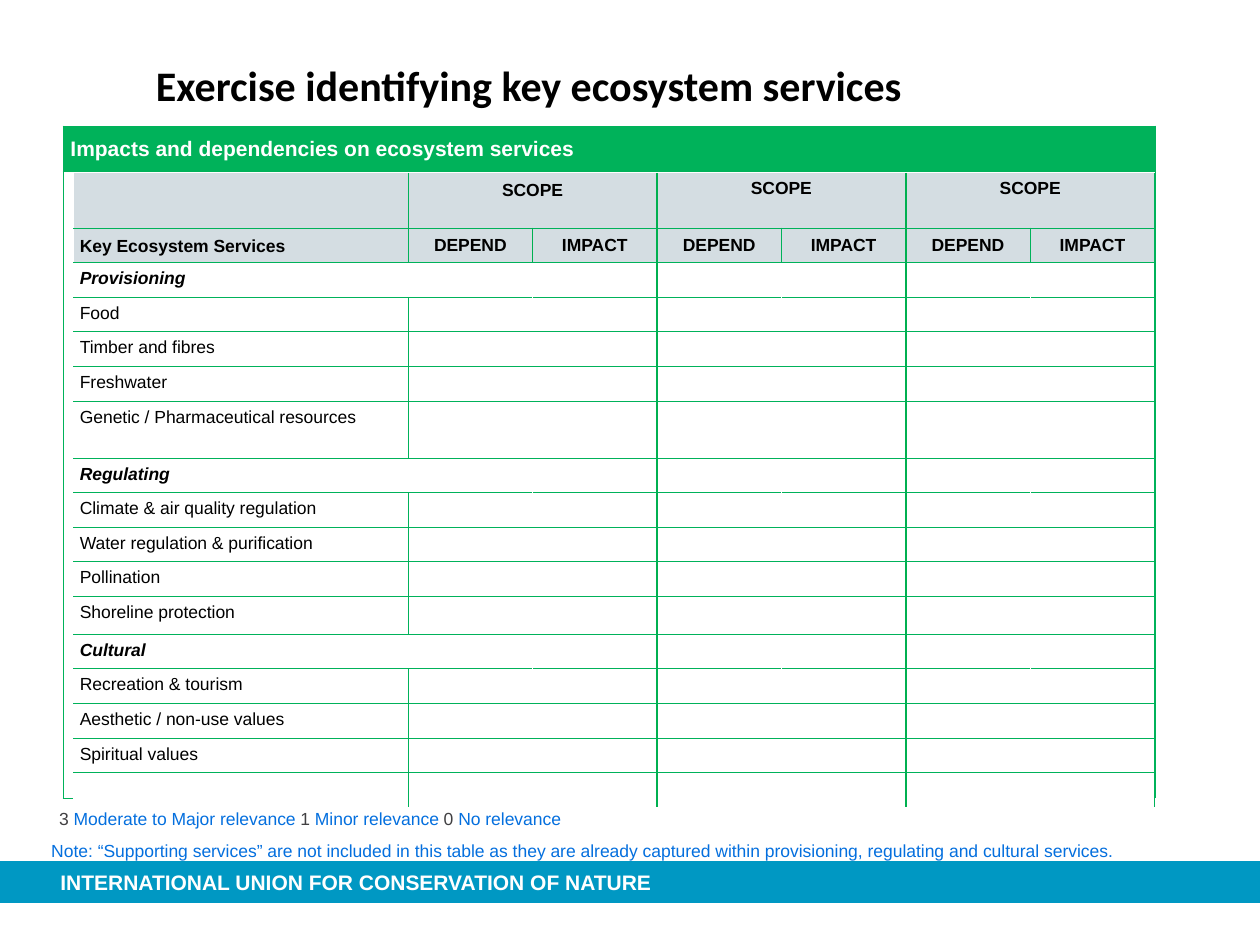
from pptx import Presentation
from pptx.dml.color import RGBColor
from pptx.enum.shapes import MSO_SHAPE
from pptx.enum.text import MSO_ANCHOR as ANCHOR, PP_ALIGN as ALIGN
from pptx.oxml import parse_xml
from pptx.oxml.ns import nsdecls
from pptx.util import Pt

WHITE = RGBColor(0xFF, 0xFF, 0xFF)
BLACK = RGBColor(0, 0, 0)
GREEN = RGBColor(0x00, 0xB2, 0x5A)
DIVIDER_GREEN = RGBColor(0x00, 0xB0, 0x50)
HEAD_GREY = RGBColor(0xD4, 0xDD, 0xE2)
FOOTER_BLUE = RGBColor(0x00, 0x98, 0xC3)
NOTE_BLUE = RGBColor(0x04, 0x6F, 0xDE)
DARK = RGBColor(0x41, 0x40, 0x42)

THIN = (GREEN, 0.5)
DIVIDER = (DIVIDER_GREEN, 1)
PALE = (WHITE, 0.5)


def write(paragraph, text, size, color, font="Arial", bold=False, italic=False):
    run = paragraph.add_run()
    run.text = text
    run.font.color.rgb = color
    look = {"size": Pt(size), "name": font, "bold": bold, "italic": italic}
    for name, value in look.items():
        setattr(run.font, name, value)


def style_cell(cell, fill, borders, margin, anchor=ANCHOR.TOP):
    """Fill, margins and the left, right, top and bottom borders of a cell."""
    if fill is None:
        cell.fill.background()
    else:
        cell.fill.solid()
        cell.fill.fore_color.rgb = fill
    cell.vertical_anchor = anchor
    for side in ("left", "right", "top", "bottom"):
        setattr(cell, f"margin_{side}", Pt(margin))
    properties = cell._tc.get_or_add_tcPr()
    for index, (side, border) in enumerate(zip("LRTB", borders)):
        if border:
            color, width = border
            paint = f'<a:solidFill><a:srgbClr val="{color}"/></a:solidFill>'
        else:
            paint, width = "<a:noFill/>", 0
        properties.insert(index, parse_xml(
            f'<a:ln{side} {nsdecls("a")} w="{Pt(width)}">{paint}</a:ln{side}>'))
    # Empty cells need a small size, or they stretch their row
    if not cell.text_frame.text:
        cell.text_frame.paragraphs[0]._p.append(
            parse_xml(f'<a:endParaRPr {nsdecls("a")} sz="800"/>'))


deck = Presentation()
deck.slide_width, deck.slide_height = Pt(720), Pt(540)
slide = deck.slides.add_slide(deck.slide_layouts[6])
shapes = slide.shapes

# Footer band
band = shapes.add_shape(MSO_SHAPE.RECTANGLE, Pt(0), Pt(492), Pt(720), Pt(24))
band.shadow.inherit = False
band.fill.solid()
band.fill.fore_color.rgb = FOOTER_BLUE
band.line.fill.background()

# Outer frame with the green heading
frame = shapes.add_table(2, 1, Pt(36), Pt(72), Pt(624), Pt(384)).table
frame.rows[0].height, frame.rows[1].height = Pt(26), Pt(358)
heading, body = frame.cell(0, 0), frame.cell(1, 0)
write(heading.text_frame.paragraphs[0],
      "Impacts and dependencies on ecosystem services", 12, WHITE, bold=True)
style_cell(heading, GREEN, [THIN] * 4, 4.3, ANCHOR.MIDDLE)
style_cell(body, None, [THIN] * 4, 4.3)

# Services grid: each group name is followed by its services
groups = {
    "Provisioning": ["Food", "Timber and fibres", "Freshwater",
                     "Genetic / Pharmaceutical resources"],
    "Regulating": ["Climate & air quality regulation", "Water regulation & purification",
                   "Pollination", "Shoreline protection"],
    "Cultural": ["Recreation & tourism", "Aesthetic / non-use values", "Spiritual values"],
}
labels = ["", "Key Ecosystem Services"]
for group, services in groups.items():
    labels += [group, *services]
labels.append("")
last = len(labels) - 1

ROW_HEIGHT = 19.8
special_heights = {0: 31.5, labels.index("Genetic / Pharmaceutical resources"): 32.5,
                   labels.index("Shoreline protection"): 21.5}
heights = [special_heights.get(row, ROW_HEIGHT) for row in range(len(labels))]
widths = [191.2] + [71.1] * 6

grid = shapes.add_table(len(labels), len(widths), Pt(42), Pt(98.8),
                        Pt(sum(widths)), Pt(sum(heights))).table
for row, height in zip(grid.rows, heights):
    row.height = Pt(height)
for column, width in zip(grid.columns, widths):
    column.width = Pt(width)

for row, label in enumerate(labels):
    is_head, is_group = row < 2, label in groups
    # Vertical lines from the left edge to the right edge
    inner = [THIN if is_head else None if is_group else PALE] * 3
    if row == 1:
        inner[0] = DIVIDER
    lines = [PALE, None if is_group else THIN, inner[0], DIVIDER,
             inner[1], DIVIDER, inner[2], THIN]
    if row == 0:
        for column in (1, 3, 5):
            grid.cell(0, column).merge(grid.cell(0, column + 1))
    elif is_group:
        grid.cell(row, 0).merge(grid.cell(row, 2))
    for column in range(len(widths)):
        cell = grid.cell(row, column)
        paragraph = cell.text_frame.paragraphs[0]
        text, anchor = "", ANCHOR.TOP
        if column == 0:
            text = label
            anchor = ANCHOR.BOTTOM if row == 1 else ANCHOR.TOP
        elif is_head:
            paragraph.alignment = ALIGN.CENTER
            if row == 1:
                text, anchor = ("IMPACT", "DEPEND")[column % 2], ANCHOR.MIDDLE
            elif column % 2:
                text = "SCOPE"
        if text:
            write(paragraph, text, 10, BLACK, bold=is_head or is_group, italic=is_group)
        right = lines[column + 1]
        if cell.is_merge_origin:
            right = lines[column + cell.span_width]
        borders = [lines[column], right,
                   THIN if row > 0 else None, THIN if row < last else None]
        style_cell(cell, HEAD_GREY if is_head else WHITE, borders, 3.6, anchor)
grid.cell(0, 1).margin_top = Pt(4.6)

# Title, legend, note and footer text: box, margins, anchor, then runs
texts = [
    ((82, 26, 527, 40), (7.2, 3.6), ANCHOR.TOP, 24, "Calibri", True,
     [("Exercise identifying key ecosystem services", BLACK)]),
    ((33.8, 461.8, 306, 12), (0, 0), ANCHOR.TOP, 10, "Arial", False,
     [("3 ", DARK), ("Moderate to Major relevance ", NOTE_BLUE),
      ("1 ", DARK), ("Minor relevance ", NOTE_BLUE),
      ("0 ", DARK), ("No relevance", NOTE_BLUE)]),
    ((29.3, 479.8, 640, 12), (0, 0), ANCHOR.TOP, 10, "Arial", False,
     [("Note: “Supporting services” are not included in this table as they are already "
       "captured within provisioning, regulating and cultural services.", NOTE_BLUE)]),
    ((34.5, 497, 403, 14), (0, 0), ANCHOR.MIDDLE, 12, "Arial", True,
     [("INTERNATIONAL UNION FOR CONSERVATION OF NATURE", WHITE)]),
]
for box, (side, edge), anchor, size, font, bold, runs in texts:
    text_frame = shapes.add_textbox(*map(Pt, box)).text_frame
    layout = {"word_wrap": True, "vertical_anchor": anchor,
              "margin_left": Pt(side), "margin_right": Pt(side),
              "margin_top": Pt(edge), "margin_bottom": Pt(edge)}
    for name, value in layout.items():
        setattr(text_frame, name, value)
    paragraph = text_frame.paragraphs[0]
    if font == "Calibri":
        paragraph.line_spacing = 1.15
    for text, color in runs:
        write(paragraph, text, size, color, font, bold)

deck.save("out.pptx")
